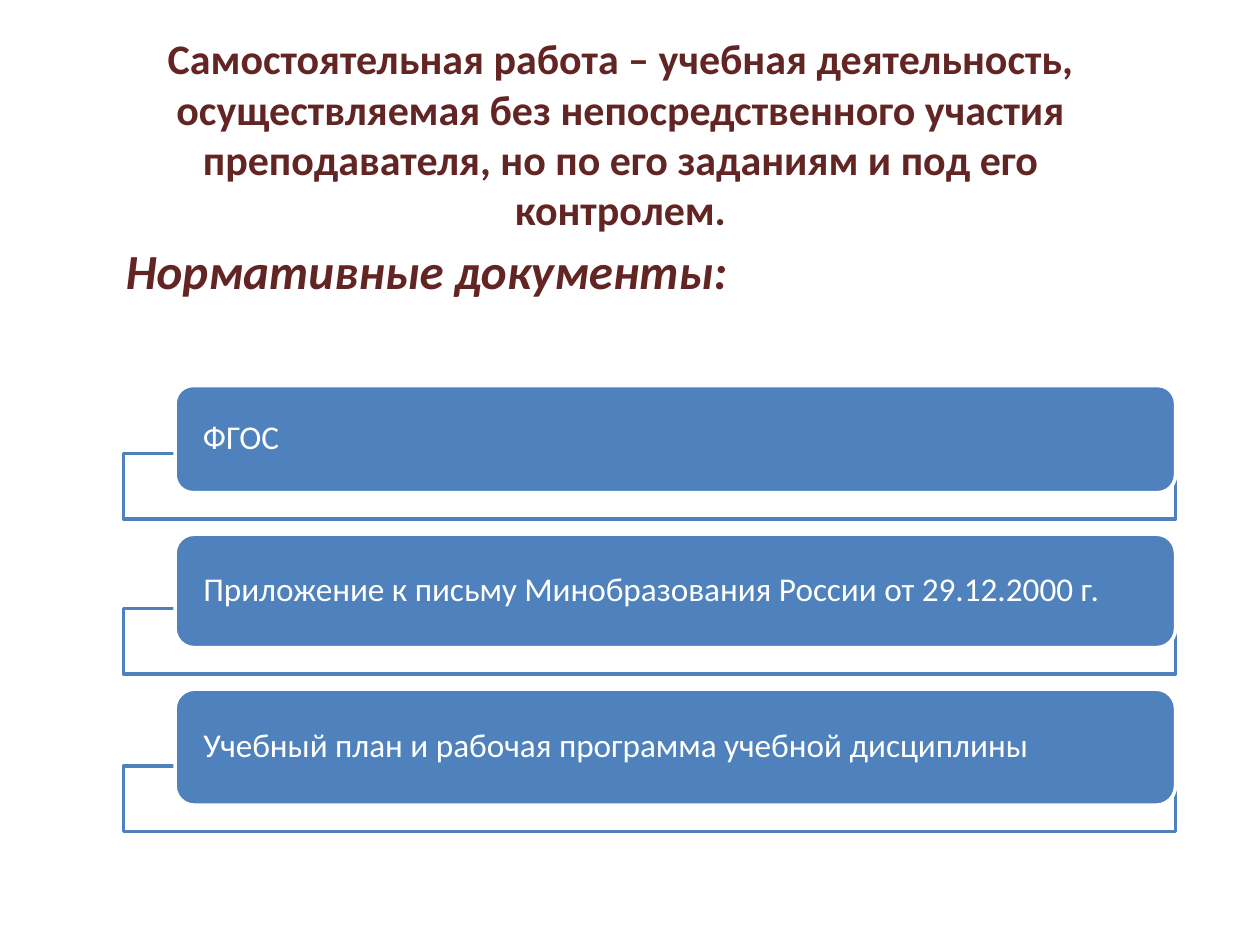
from pptx import Presentation
from pptx import util as u
from pptx.dml.color import RGBColor
from pptx.enum import shapes, text

COLORS = {"heading": "632523", "accent": "4F81BD", "white": "FFFFFF"}

# Text, top of the label, height of the label, top of the frame behind it
DOCUMENTS = [
    ("ФГОС", 3.06, 0.85, 3.6),
    ("Приложение к письму Минобразования России от 29.12.2000 г.", 4.24, 0.9, 4.83),
    ("Учебный план и рабочая программа учебной дисциплины", 5.47, 0.92, 6.08),
]


def color(name):
    return RGBColor.from_string(COLORS[name])


class SlideBuilder:
    """Holds the text style and the slide being filled."""

    font_name = "Calibri"

    def __init__(self, slide):
        self.slide = slide

    def set_text(self, frame, content, size, color_name, bold=False, italic=False,
                 align=text.PP_ALIGN.LEFT):
        frame.word_wrap = True
        frame.auto_size = text.MSO_AUTO_SIZE.NONE
        paragraph = frame.paragraphs[0]
        paragraph.text = content
        paragraph.alignment = align
        font = paragraph.font
        font.name, font.size = self.font_name, u.Pt(size)
        font.bold, font.italic = bold, italic
        font.color.rgb = color(color_name)
        return paragraph

    def title(self, content, left, top, width, height):
        heading = self.slide.shapes.title
        heading.left, heading.top = u.Inches(left), u.Inches(top)
        heading.width, heading.height = u.Inches(width), u.Inches(height)
        heading.text_frame.vertical_anchor = text.MSO_ANCHOR.TOP
        self.set_text(heading.text_frame, content, 24, "heading", bold=True,
                      align=text.PP_ALIGN.CENTER)

    def subtitle(self, content, left, top, width, height):
        box = self.slide.shapes.add_textbox(
            u.Inches(left), u.Inches(top), u.Inches(width), u.Inches(height))
        self.set_text(box.text_frame, content, 28, "heading", bold=True, italic=True)

    def box(self, preset, left, top, width, height, fill, line):
        shape = self.slide.shapes.add_shape(
            preset, u.Inches(left), u.Inches(top), u.Inches(width), u.Inches(height))
        shape.shadow.inherit = False
        shape.fill.solid()
        shape.fill.fore_color.rgb = color(fill)
        shape.line.color.rgb = color(line)
        shape.line.width = u.Pt(2)
        return shape

    def document(self, content, top, height, frame_top):
        """Draw a rounded label over the outlined frame behind it."""
        self.box(shapes.MSO_SHAPE.RECTANGLE, 0.98, frame_top, 8.35, 0.52,
                 "white", "accent")
        label = self.box(shapes.MSO_SHAPE.ROUNDED_RECTANGLE, 1.39, top, 7.94, height,
                         "accent", "white")
        frame = label.text_frame
        frame.margin_left = frame.margin_right = u.Inches(0.18)
        frame.margin_top = frame.margin_bottom = 0
        frame.vertical_anchor = text.MSO_ANCHOR.MIDDLE
        self.set_text(frame, content, 19, "white").line_spacing = 0.9


def main():
    deck = Presentation()
    deck.slide_width, deck.slide_height = u.Inches(10), u.Inches(7.5)
    title_only = deck.slide_layouts.get_by_name("Title Only")
    builder = SlideBuilder(deck.slides.add_slide(title_only))

    for document in DOCUMENTS:
        builder.document(*document)
    builder.title(
        "Самостоятельная работа – учебная деятельность, осуществляемая без "
        "непосредственного участия преподавателя, но по его заданиям и под его "
        "контролем.", 0.67, 0.21, 8.51, 1.72)
    builder.subtitle("Нормативные документы:", 0.9, 1.86, 5.51, 0.57)

    deck.save("out.pptx")


if __name__ == "__main__":
    main()
